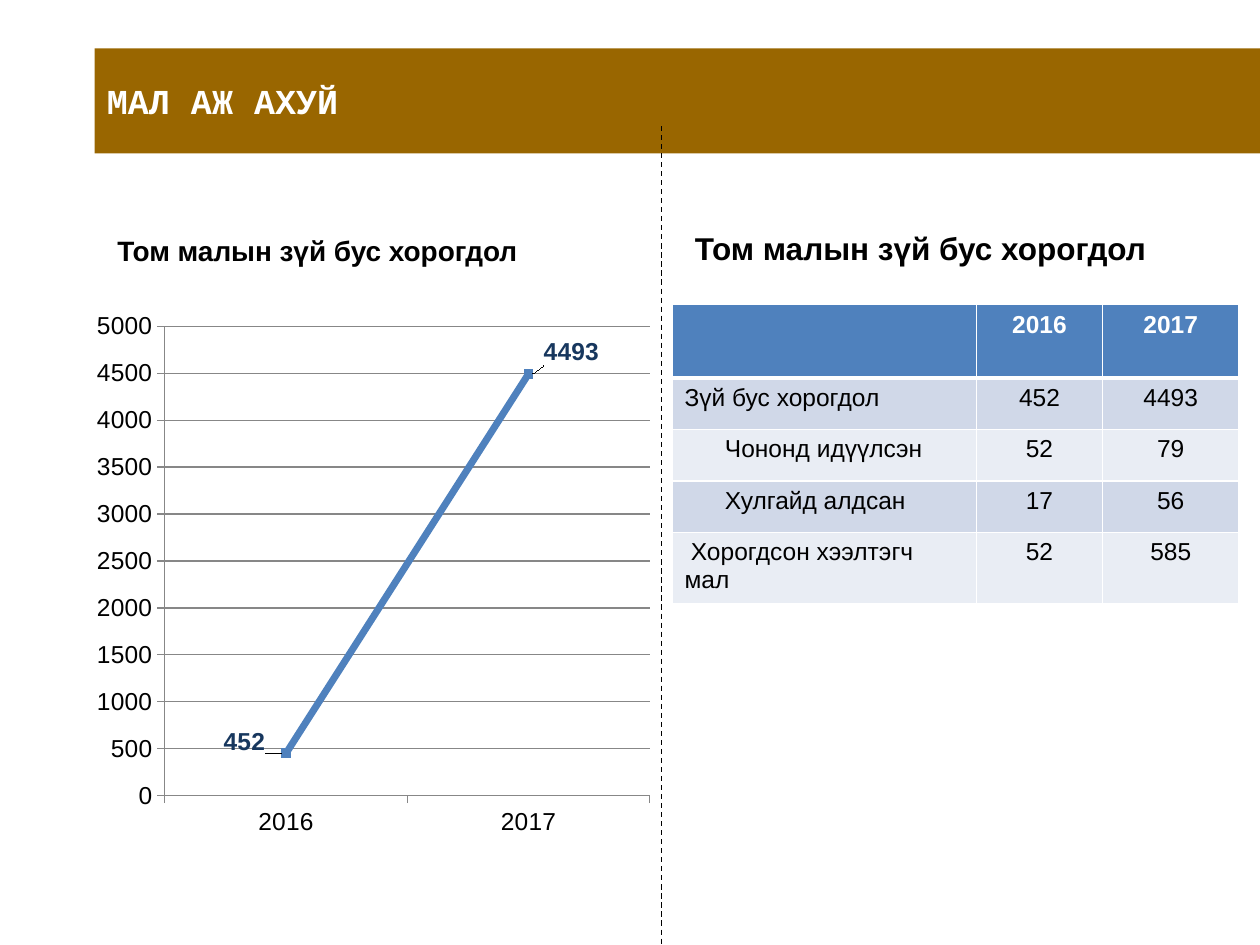
import pptx
import pptx.chart.data
import pptx.dml.color
import pptx.enum.chart
import pptx.enum.dml
import pptx.enum.shapes
import pptx.enum.text
import pptx.oxml
import pptx.oxml.ns
import pptx.util
from dataclasses import dataclass

COLUMNS, ROWS = 120, 90
YEARS = ["2016", "2017"]
HEADING = "Том малын зүй бус хорогдол"
LOSSES = [
    ("Зүй бус хорогдол", 0, 452, 4493),
    ("Чононд идүүлсэн", 0.32, 52, 79),
    ("Хулгайд алдсан", 0.32, 17, 56),
    ("Хорогдсон хээлтэгч мал", 0.05, 52, 585),
]


@dataclass(frozen=True)
class Theme:
    font: str = "Arial"
    title_font: str = "Courier New"
    text: str = "000000"
    white: str = "FFFFFF"
    bar: str = "996600"
    accent: str = "4F81BD"
    label: str = "17375E"
    axis: str = "878787"
    bands: tuple = ("D0D8E8", "E9EDF4")
    title_size: int = 20
    heading_size: int = 18
    chart_heading_size: int = 16
    body_size: int = 14


THEME = Theme()


def grid(units):
    return pptx.util.Inches(units * 10 / COLUMNS)


def place(left, top, width, height):
    return [grid(units) for units in (left, top, width, height)]


def rgb(value):
    return pptx.dml.color.RGBColor.from_string(value)


def fill(target, color):
    target.fill.solid()
    target.fill.fore_color.rgb = rgb(color)


def style(font, size, color, bold=False, name=THEME.font):
    font.name = name
    font.size = pptx.util.Pt(size)
    font.bold = bold
    font.color.rgb = rgb(color)


def add_title(page, text):
    bar = page.shapes.add_shape(
        pptx.enum.shapes.MSO_SHAPE.RECTANGLE, *place(9, 4.6, 111, 10))
    bar.shadow.inherit = False
    fill(bar, THEME.bar)
    bar.line.fill.background()
    bar.text_frame.text = text
    bar.text_frame.vertical_anchor = pptx.enum.text.MSO_ANCHOR.MIDDLE
    para = bar.text_frame.paragraphs[0]
    para.alignment = pptx.enum.text.PP_ALIGN.JUSTIFY
    style(para.runs[0].font, THEME.title_size, THEME.white, True,
          THEME.title_font)


def add_heading(page, left, size):
    box = page.shapes.add_textbox(*place(left, 20, 53, 6))
    box.text_frame.word_wrap = True
    box.text_frame.vertical_anchor = pptx.enum.text.MSO_ANCHOR.BOTTOM
    box.text_frame.text = HEADING
    style(box.text_frame.paragraphs[0].runs[0].font, size, THEME.text, True)


def manual_layout(**values):
    layout = pptx.oxml.parse_xml(
        f'<c:layout {pptx.oxml.ns.nsdecls("c")}><c:manualLayout/></c:layout>')
    for tag, value in values.items():
        child = layout[0].makeelement(pptx.oxml.ns.qn(f"c:{tag}"),
                                      {"val": str(value)})
        layout[0].append(child)
    return layout


def style_axis(axis):
    style(axis.tick_labels.font, THEME.body_size, THEME.text)
    axis.format.line.color.rgb = rgb(THEME.axis)
    axis.major_tick_mark = pptx.enum.chart.XL_TICK_MARK.OUTSIDE


def label_point(series, index, position, shift):
    label = series.points[index].data_label
    style(label.font, THEME.body_size, THEME.label, True)
    label.position = position
    element = series._element.xpath(f"c:dLbls/c:dLbl[c:idx/@val='{index}']")[0]
    element.insert(1, manual_layout(x=shift[0], y=shift[1]))


def add_line_chart(page):
    data = pptx.chart.data.CategoryChartData()
    data.categories = YEARS
    data.add_series("Series 1", LOSSES[0][2:])
    chart = page.shapes.add_chart(
        pptx.enum.chart.XL_CHART_TYPE.LINE_MARKERS,
        *place(8, 29, 55, 52), data).chart
    chart.has_legend = False
    chart.has_title = False
    style(chart.font, THEME.body_size, THEME.text)
    style_axis(chart.category_axis)
    style_axis(chart.value_axis)
    chart.value_axis.minimum_scale = 0
    chart.value_axis.maximum_scale = 5000
    chart.value_axis.major_unit = 500
    chart.value_axis.major_gridlines.format.line.color.rgb = rgb(THEME.axis)

    plot_area = chart._chartSpace.xpath("c:chart/c:plotArea")[0]
    for old in plot_area.xpath("c:layout"):
        plot_area.remove(old)
    plot_area.insert(0, manual_layout(
        layoutTarget="inner", xMode="edge", yMode="edge",
        x=0.14, y=0.04, w=0.84, h=0.86))

    chart.plots[0].vary_by_categories = False
    series = chart.plots[0].series[0]
    series.smooth = False
    series.format.line.color.rgb = rgb(THEME.accent)
    series.format.line.width = pptx.util.Pt(4)
    series.marker.style = pptx.enum.chart.XL_MARKER_STYLE.SQUARE
    series.marker.size = 5
    fill(series.marker.format, THEME.accent)
    series.marker.format.line.color.rgb = rgb(THEME.accent)
    positions = pptx.enum.chart.XL_LABEL_POSITION
    label_point(series, 0, positions.LEFT, (-0.02, -0.02))
    label_point(series, 1, positions.RIGHT, (0.01, -0.04))


def add_borders(cell, bottom):
    properties = cell._tc.get_or_add_tcPr()
    for side, width in (("L", 1), ("R", 1), ("T", 1), ("B", bottom)):
        properties.append(pptx.oxml.parse_xml(
            f'<a:ln{side} {pptx.oxml.ns.nsdecls("a")} '
            f'w="{pptx.util.Pt(width)}"><a:solidFill>'
            f'<a:srgbClr val="{THEME.white}"/></a:solidFill></a:ln{side}>'))


def fill_cell(cell, text, color, header, centered, indent):
    add_borders(cell, 3 if header else 1)
    fill(cell, color)
    cell.text_frame.text = str(text)
    para = cell.text_frame.paragraphs[0]
    if centered:
        para.alignment = pptx.enum.text.PP_ALIGN.CENTER
    if indent:
        para._p.get_or_add_pPr().set("indent", str(pptx.util.Inches(indent)))
    style(para.font, THEME.body_size,
          THEME.white if header else THEME.text, header)
    for span in para.runs:
        style(span.font, THEME.body_size,
              THEME.white if header else THEME.text, header)


def add_loss_table(page):
    records = [("", 0, *YEARS)] + LOSSES
    table = page.shapes.add_table(
        len(records), 3, *place(64, 29, 54, 26.6)).table
    for column, width in zip(table.columns, (29, 12, 13)):
        column.width = grid(width)
    for index, (name, indent, *values) in enumerate(records):
        header = index == 0
        table.rows[index].height = grid(7 if header else 4.9)
        color = THEME.accent if header else THEME.bands[(index - 1) % 2]
        for column, text in enumerate([name, *values]):
            fill_cell(table.cell(index, column), text, color, header,
                      column > 0, 0 if column else indent)


def add_divider(page):
    line = page.shapes.add_connector(
        pptx.enum.shapes.MSO_CONNECTOR.STRAIGHT,
        *place(63, 12, 63, ROWS))
    line.line.color.rgb = rgb(THEME.text)
    line.line.width = pptx.util.Pt(0.75)
    line.line.dash_style = pptx.enum.dml.MSO_LINE.DASH
    properties = line._element.spPr
    properties.append(properties.makeelement(
        pptx.oxml.ns.qn("a:effectLst"), {}))


def main():
    deck = pptx.Presentation()
    deck.slide_width, deck.slide_height = grid(COLUMNS), grid(ROWS)
    page = deck.slides.add_slide(deck.slide_layouts[6])
    add_heading(page, 10, THEME.chart_heading_size)
    add_line_chart(page)
    add_heading(page, 65, THEME.heading_size)
    add_loss_table(page)
    add_title(page, "МАЛ АЖ АХУЙ")
    add_divider(page)
    deck.save("out.pptx")


if __name__ == "__main__":
    main()
